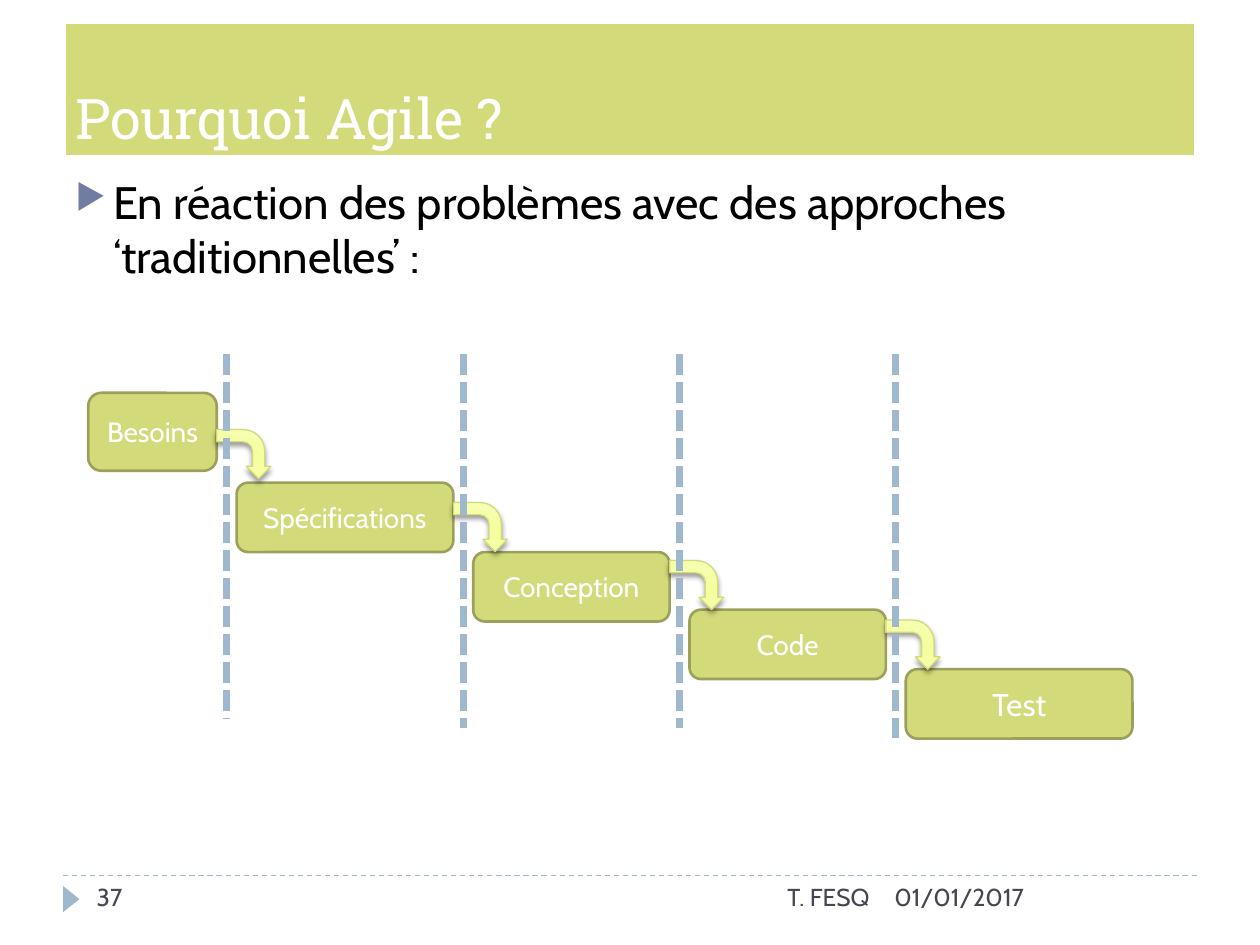
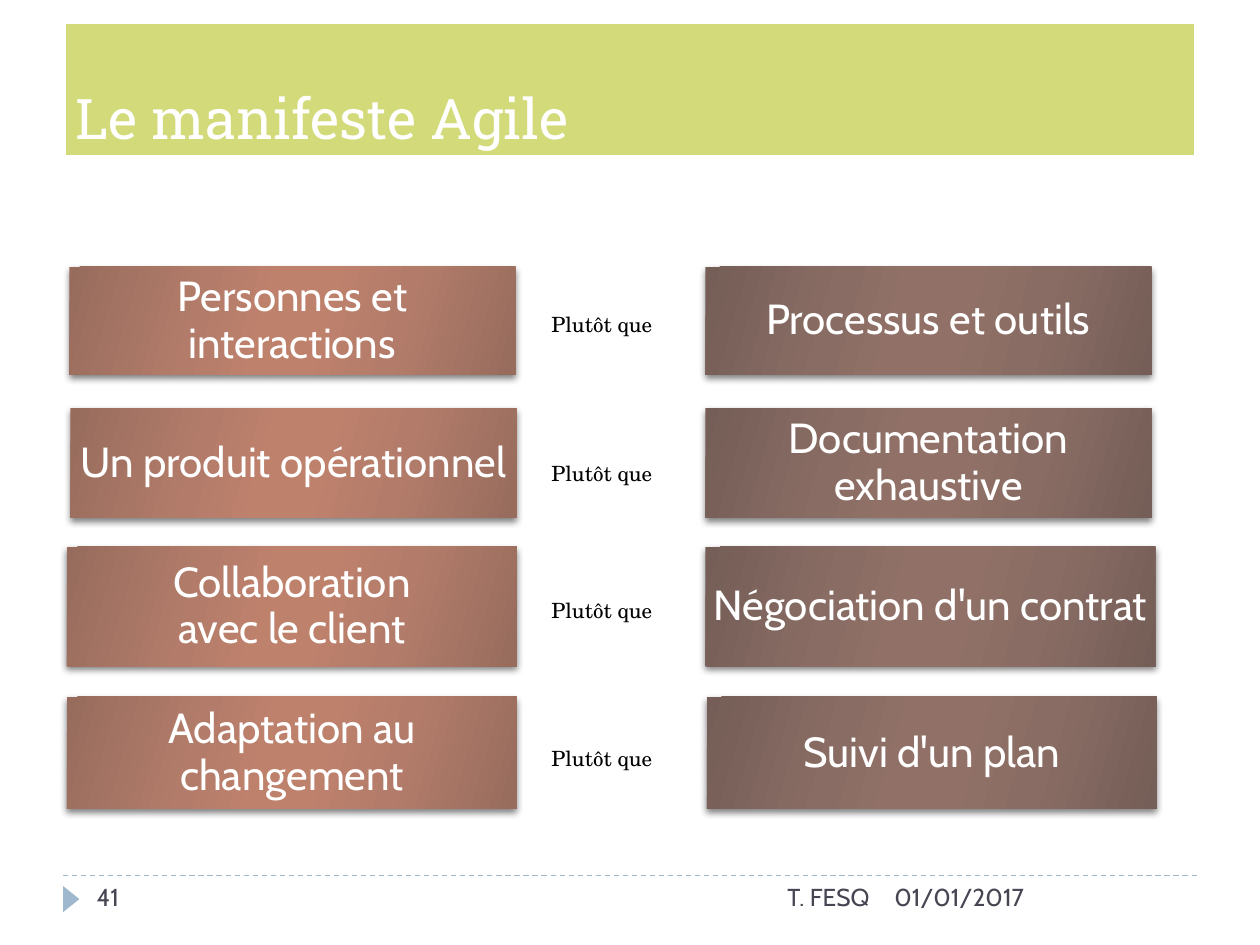
from dataclasses import dataclass

from lxml import etree
from pptx import Presentation
from pptx.dml.color import RGBColor
from pptx.enum.dml import MSO_LINE
from pptx.enum.shapes import MSO_CONNECTOR, MSO_SHAPE
from pptx.enum.text import MSO_ANCHOR as ANCHOR, PP_ALIGN as ALIGN
from pptx.oxml import parse_xml
from pptx.oxml.ns import nsdecls, qn
from pptx.util import Cm, Pt


@dataclass(frozen=True)
class Theme:
    # Colours
    band: str = "D2DA7A"
    band_edge: str = "9BA15A"
    rule: str = "9FB8CD"
    bullet: str = "727CA3"
    footer: str = "464653"
    white: str = "FFFFFF"
    black: str = "000000"
    # Gradients from the outer edge to the middle
    arrow: tuple = ("F8FEC2", "F6FFA7", "F6FF9F")
    preferred: tuple = ("976C5D", "B37C6A", "BE816C")
    lesser: tuple = ("745E57", "896D64", "917167")
    # Fonts and sizes
    body_font: str = "Cabin"
    title_font: str = "Roboto Slab"
    note_font: str = "TeX Gyre Schola"
    title_size: int = 32
    body_size: int = 26
    card_size: int = 24
    footer_size: int = 14
    step_size: int = 16
    last_step_size: int = 18
    note_size: int = 12


T = Theme()

# Label, width, top, height, type size
STEPS = [
    ("Besoins", 2.59, 7.92, 1.57, T.step_size),
    ("Spécifications", 4.37, 9.73, 1.4, T.step_size),
    ("Conception", 3.96, 11.13, 1.4, T.step_size),
    ("Code", 3.96, 12.29, 1.4, T.step_size),
    ("Test", 4.57, 13.49, 1.4, T.last_step_size),
]
# Arrow top and divider bottom between each step and the next
HANDOVERS = [(8.61, 14.48), (10.08, 14.68), (11.25, 14.68), (12.45, 14.88)]

# Preferred lines, lesser lines, left, right, top, width, height, note top
VALUES = [
    (["Personnes et interactions"], ["Processus et outils"],
     1.4, 14.22, 5.38, 8.99, 2.18, 6.17),
    (["Un produit opérationnel"], ["Documentation exhaustive"],
     1.42, 14.22, 8.23, 8.99, 2.21, 9.17),
    (["Collaboration", "avec le client"], ["Négociation d'un contrat"],
     1.35, 14.22, 11.02, 9.07, 2.41, 11.94),
    (["Adaptation au changement"], ["Suivi d'un plan"],
     1.35, 14.25, 14.05, 9.07, 2.26, 14.91),
]


def rgb(color):
    return RGBColor.from_string(color)


def write(s, lines, size, color, font=T.body_font, align=ALIGN.LEFT,
          anchor=ANCHOR.TOP, inset=None, spacing=None):
    """Fill a shape with one paragraph per line."""
    tf = s.text_frame
    tf.word_wrap = True
    tf.vertical_anchor = anchor
    if inset is not None:
        tf.margin_left = tf.margin_right = Cm(inset)
        tf.margin_top = tf.margin_bottom = Cm(inset)
    for i, line in enumerate(lines):
        p = tf.add_paragraph() if i else tf.paragraphs[0]
        p.alignment = align
        if spacing:
            p.line_spacing = spacing
        r = p.add_run()
        r.text = line
        r.font.name = font
        r.font.size = Pt(size)
        r.font.color.rgb = rgb(color)
    return tf


def add_text(slide, box, lines, size, color, **style):
    s = slide.shapes.add_textbox(*map(Cm, box))
    return write(s, lines, size, color, **style)


def add_block(slide, kind, box, fill=None, edge=None, edge_width=1.0):
    s = slide.shapes.add_shape(kind, *map(Cm, box))
    s.shadow.inherit = False
    if fill:
        s.fill.solid()
        s.fill.fore_color.rgb = rgb(fill)
    else:
        s.fill.background()
    if edge:
        s.line.color.rgb = rgb(edge)
        s.line.width = Pt(edge_width)
    else:
        s.line.fill.background()
    return s


def add_line(slide, x1, y1, x2, y2, width, dash):
    c = slide.shapes.add_connector(MSO_CONNECTOR.STRAIGHT, *map(Cm, (x1, y1, x2, y2)))
    c.line.color.rgb = rgb(T.rule)
    c.line.width = Pt(width)
    c.line.dash_style = dash
    etree.SubElement(c._element.spPr, qn("a:effectLst"))


def add_gloss(s, colors, alpha, blur, dist):
    """Give an unfilled shape a mirrored gradient and a soft shadow below."""
    edge, inner, middle = colors
    stops = zip((0, 30, 45, 55, 73, 100), (edge, inner, middle, middle, inner, edge))
    gs = "".join(f'<a:gs pos="{pos * 1000}"><a:srgbClr val="{c}"/></a:gs>'
                 for pos, c in stops)
    spPr = s._element.spPr
    spPr.replace(spPr.find(qn("a:noFill")), parse_xml(
        f'<a:gradFill {nsdecls("a")} rotWithShape="1"><a:gsLst>{gs}</a:gsLst>'
        f'<a:lin ang="{16 * 60000}" scaled="0"/></a:gradFill>'))
    spPr.find(qn("a:effectLst")).append(parse_xml(
        f'<a:outerShdw {nsdecls("a")} blurRad="{Pt(blur)}" dist="{Pt(dist)}" '
        f'dir="5400000" rotWithShape="0"><a:srgbClr val="{T.black}">'
        f'<a:alpha val="{alpha * 1000}"/></a:srgbClr></a:outerShdw>'))


def add_title(slide, box, title):
    s = add_block(slide, MSO_SHAPE.RECTANGLE, box, T.band, T.white, 3)
    write(s, [title], T.title_size, T.white, font=T.title_font, anchor=ANCHOR.BOTTOM)


def add_footer(slide, box, number):
    left, top, width, height = box
    add_line(slide, left, top, left + width, top, 0.75, MSO_LINE.DASH)
    marker = add_block(slide, MSO_SHAPE.ISOSCELES_TRIANGLE,
                       (left - 0.1, top + 0.31, 0.53, 0.33), T.rule)
    marker.rotation = 90
    for x, w, text, align in [
        (16.51, 6.35, "01/01/2017", ALIGN.LEFT),
        (6.78, 9.73, "T. FESQ", ALIGN.RIGHT),
        (0.43, 5.51, number, ALIGN.LEFT),
    ]:
        add_text(slide, (left + x, top, w, height), [text],
                 T.footer_size, T.footer, align=align)


def add_bullet(slide, box, text):
    tf = add_text(slide, box, [text], T.body_size, T.black)
    p = tf.paragraphs[0]
    p.space_before = Pt(6)
    pPr = p._p.get_or_add_pPr()
    pPr.set("marL", str(Cm(0.76)))
    pPr.set("indent", str(-Cm(0.76)))
    for xml in (f'<a:buClr {nsdecls("a")}><a:srgbClr val="{T.bullet}"/></a:buClr>',
                f'<a:buSzPct {nsdecls("a")} val="76000"/>',
                f'<a:buChar {nsdecls("a")} char="▶"/>'):
        pPr.append(parse_xml(xml))


def add_waterfall(slide, left, top, gap=0.4):
    """Steps run left to right; an arrow and a divider sit in each gap."""
    ends = []
    for label, width, step_top, height, size in STEPS:
        s = add_block(slide, MSO_SHAPE.ROUNDED_RECTANGLE,
                      (left, step_top, width, height), T.band, T.band_edge, 1.5)
        write(s, [label], size, T.white, align=ALIGN.CENTER, anchor=ANCHOR.MIDDLE)
        ends.append(left + width)
        left += width + gap

    # Arrows first, dividers over them
    for end, (arrow_top, _) in zip(ends, HANDOVERS):
        arrow = add_block(slide, MSO_SHAPE.BENT_ARROW,
                          (end + 0.05, arrow_top, 0.99, 1.09), edge=T.band, edge_width=0.75)
        arrow.rotation = 90
        add_gloss(arrow, T.arrow, alpha=40, blur=3, dist=2)
    for end, (_, bottom) in zip(ends, HANDOVERS):
        x = end + gap / 2
        add_line(slide, x, top, x, bottom, 4, MSO_LINE.SQUARE_DOT)


def add_card(slide, box, lines, colors):
    s = add_block(slide, MSO_SHAPE.RECTANGLE, box)
    add_gloss(s, colors, alpha=50, blur=4, dist=2)
    write(s, lines, T.card_size, T.white, align=ALIGN.CENTER,
          anchor=ANCHOR.MIDDLE, inset=0, spacing=0.93)


def add_comparison(slide, value):
    better, worse, left, right, top, width, height, note_top = value
    add_card(slide, (right, top, width, height), worse, T.lesser)
    add_card(slide, (left, top, width, height), better, T.preferred)
    add_text(slide, (10.75, note_top, 2.77, 0.79), ["Plutôt que"], T.note_size,
             T.black, font=T.note_font, align=ALIGN.CENTER,
             anchor=ANCHOR.MIDDLE, inset=0, spacing=0.93)


def add_page(prs, title, number):
    slide = prs.slides.add_slide(prs.slide_layouts[6])
    add_title(slide, (1.27, 0.43, 22.86, 2.74), title)
    add_footer(slide, (1.27, 17.65, 22.86, 1.02), number)
    return slide


def main():
    prs = Presentation()
    prs.slide_width, prs.slide_height = Cm(25.4), Cm(19.05)

    # Why Agile
    slide = add_page(prs, "Pourquoi Agile ?", "37")
    add_bullet(slide, (1.27, 3.38, 22.86, 13.72),
               "En réaction des problèmes avec des approches ‘traditionnelles’ :")
    add_waterfall(slide, left=1.78, top=7.14)

    # Manifesto values
    slide = add_page(prs, "Le manifeste Agile", "41")
    for value in VALUES:
        add_comparison(slide, value)

    prs.save("out.pptx")


if __name__ == "__main__":
    main()
